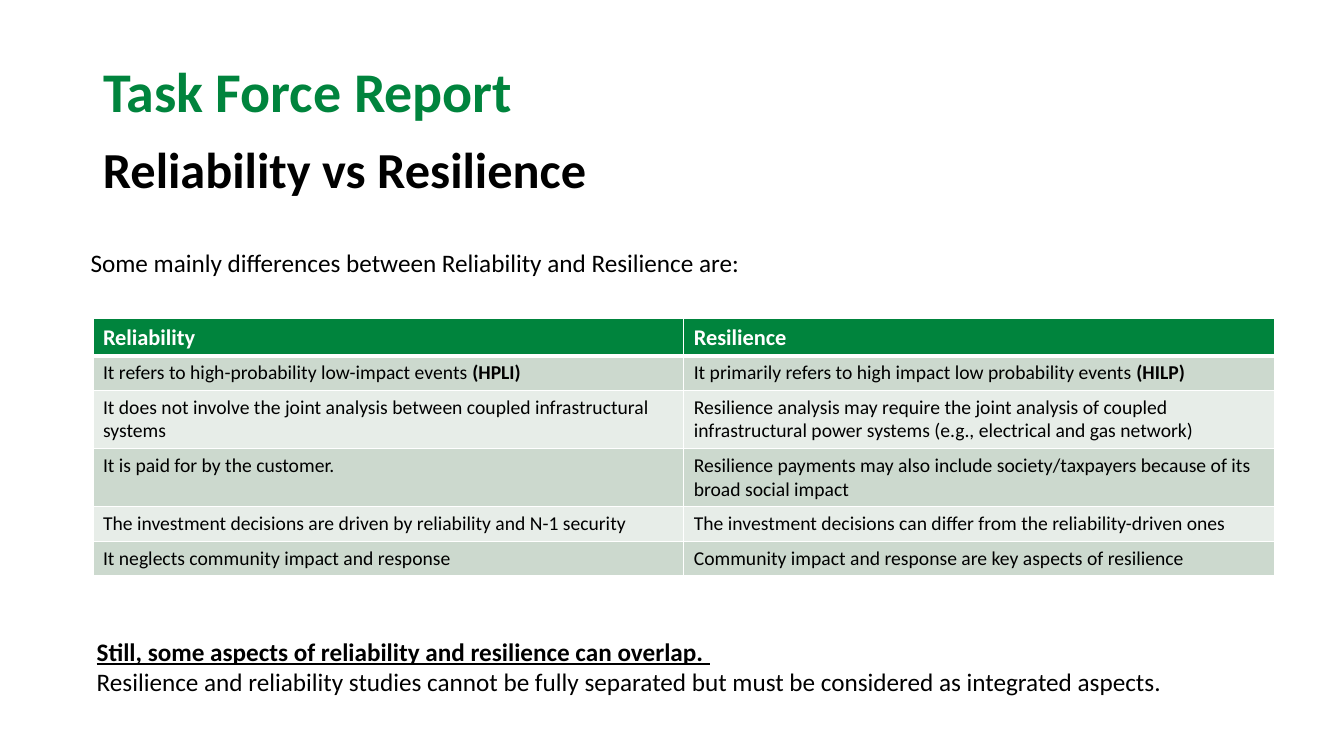
from lxml import etree
from pptx import Presentation
from pptx.dml.color import RGBColor
from pptx.enum.text import MSO_ANCHOR, MSO_AUTO_SIZE, PP_ALIGN
from pptx.oxml.ns import qn
from pptx.util import Pt

TOP = MSO_ANCHOR.TOP
LEFT = PP_ALIGN.LEFT
FIXED = MSO_AUTO_SIZE.NONE
FONT = "Calibri"
HEX = {"green": "00843D", "black": "000000", "white": "FFFFFF",
       "dark": "CCD9CE", "light": "E7EDE8"}

TITLE = "Task Force Report"
HEAD = "Reliability vs Resilience"
INTRO = "Some mainly differences between Reliability and Resilience are:"
ROWS = [
    (["Reliability"], ["Resilience"]),
    (["It refers to high-probability low-impact events ", "(HPLI)"],
     ["It primarily refers to high impact low probability events ", "(HILP)"]),
    (["It does not involve the joint analysis between coupled "
      "infrastructural systems"],
     ["Resilience analysis may require the joint analysis of coupled "
      "infrastructural power systems (e.g., electrical and gas network)"]),
    (["It is paid for by the customer."],
     ["Resilience payments may also include society/taxpayers because of its "
      "broad social impact"]),
    (["The investment decisions are driven by reliability and N-1 security"],
     ["The investment decisions can differ from the reliability-driven ones"]),
    (["It neglects community impact and response"],
     ["Community impact and response are key aspects of resilience"]),
]
HEIGHTS = [26, 24.5, 41.5, 41.5, 25, 24]
CLOSE = ["Still, some aspects of reliability and resilience can overlap. ",
         "Resilience and reliability studies cannot be fully separated but "
         "must be considered as integrated aspects."]


def color(name):
    return RGBColor.from_string(HEX[name])


def style(para, size, tint="black", bold=False):
    para.alignment = LEFT
    font = para.font
    font.name, font.size, font.bold = FONT, Pt(size), bold
    font.color.rgb = color(tint)


def fill_box(shape, box, lines, size, tint="black", bold=False):
    shape.left, shape.top, shape.width, shape.height = map(Pt, box)
    frame = shape.text_frame
    frame.word_wrap = True
    frame.auto_size = FIXED
    frame.vertical_anchor = TOP
    frame.text = "\n".join(lines)
    for para in frame.paragraphs:
        style(para, size, tint, bold)
    return frame


def add_box(slide, box, *args, **opts):
    return fill_box(slide.shapes.add_textbox(*map(Pt, box)), box, *args, **opts)


def set_edges(cell, widths):
    props = cell._tc.get_or_add_tcPr()
    for i, (side, width) in enumerate(zip("LRTB", widths)):
        line = etree.Element(qn("a:ln" + side), w=str(Pt(width)))
        solid = etree.SubElement(line, qn("a:solidFill"))
        etree.SubElement(solid, qn("a:srgbClr"), val=HEX["white"])
        props.insert(i, line)


def add_grid(slide):
    grid = slide.shapes.add_table(len(ROWS), 2, Pt(66.4), Pt(227.6),
                                  Pt(844), Pt(sum(HEIGHTS))).table
    for r, (row, high) in enumerate(zip(ROWS, HEIGHTS)):
        grid.rows[r].height = Pt(high)
        head = r == 0
        back = "green" if head else "dark" if r % 2 else "light"
        for c, parts in enumerate(row):
            cell = grid.cell(r, c)
            cell.fill.solid()
            cell.fill.fore_color.rgb = color(back)
            set_edges(cell, (1, 1, 3 if r == 1 else 1, 3 if head else 1))
            para = cell.text_frame.paragraphs[0]
            style(para, 16 if head else 14, "white" if head else "black", head)
            for i, part in enumerate(parts):
                run = para.add_run()
                run.text = part
                if i:
                    run.font.bold = True


def main():
    deck = Presentation()
    deck.slide_width, deck.slide_height = Pt(960), Pt(540)
    slide = deck.slides.add_slide(deck.slide_layouts[5])
    fill_box(slide.shapes.title, (66.4, 37, 594, 52.5), [TITLE], 40, "green", True)
    add_box(slide, (66.4, 95, 828, 52.5), [HEAD], 36, bold=True)
    add_box(slide, (57.6, 172.8, 844, 30), [INTRO], 18)
    add_grid(slide)
    end = add_box(slide, (62, 450.7, 836, 51), CLOSE, 18)
    lead = end.paragraphs[0].font
    lead.bold = lead.underline = True
    deck.save("out.pptx")


if __name__ == "__main__":
    main()
